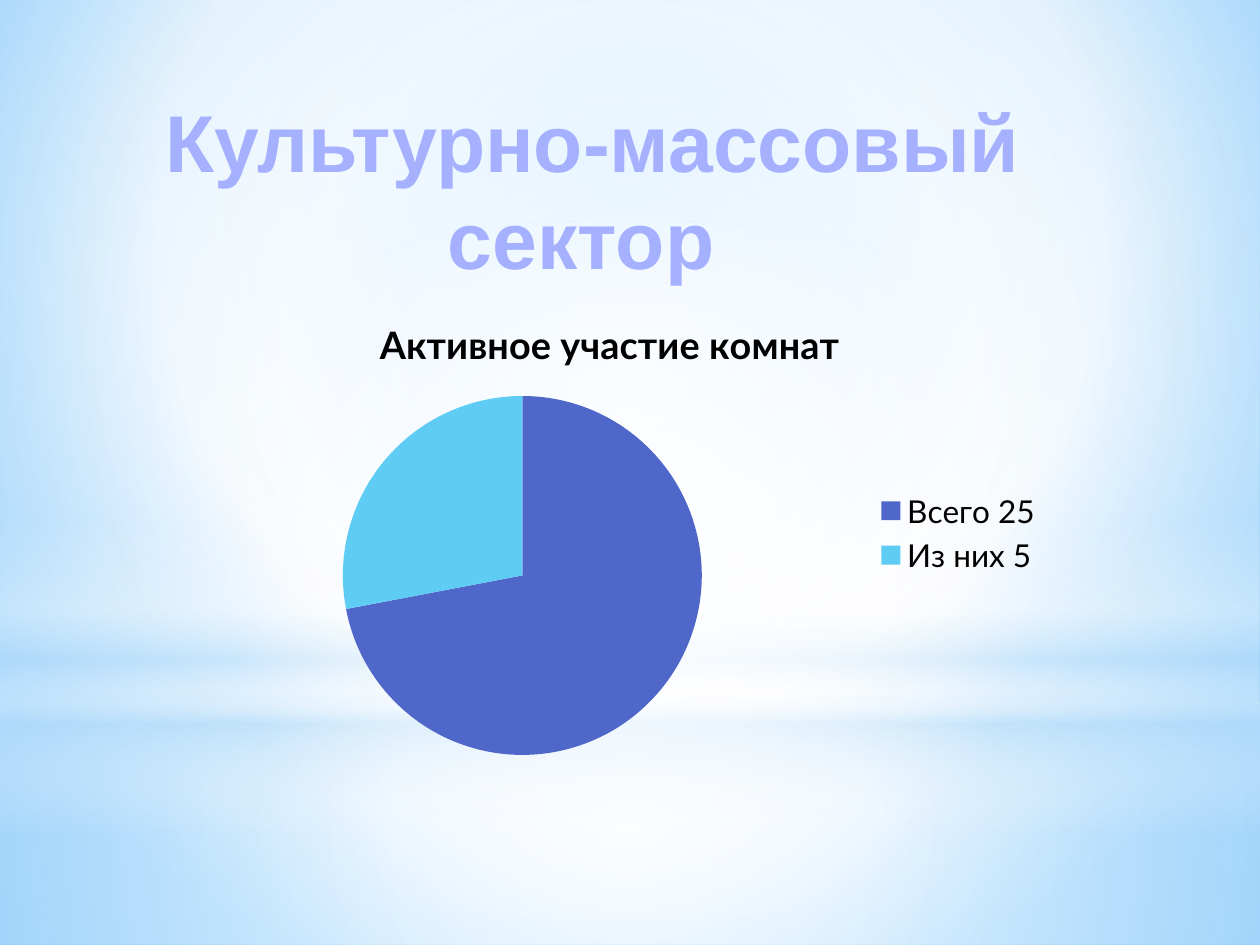
import lxml.etree
import pptx
import pptx.chart.data
import pptx.dml.color
import pptx.enum.chart
import pptx.enum.shapes
import pptx.enum.text
import pptx.oxml.ns
import pptx.util

Cm = pptx.util.Cm
qn = pptx.oxml.ns.qn
RECTANGLE = pptx.enum.shapes.MSO_SHAPE.RECTANGLE
OVAL = pptx.enum.shapes.MSO_SHAPE.OVAL

WIDTH, HEIGHT, HORIZON = 25.4, 19.05, 14.17
TITLE = "Культурно-массовый\vсектор "
TITLE_BOX = (2.9, 1.73, 18.08, 3.18)
CHART_BOX = (3.5, 5.92, 17.78, 9.65)
CHART_TITLE = "Активное участие комнат "
SLICES = [("Всего 25", 72, "4E67C8"), ("Из них 5", 28, "5ECCF3")]
CENTER = (50, 50, 50, 50)

BACKGROUND_STOPS = [(0, "9ED5FF", 100), (60, "FFFFFF", 100), (100, "5BB9FF", 100)]
BACKGROUND_FOCUS = (20, 10, 20, 60)
GLOWS = [
    (RECTANGLE, HORIZON, HEIGHT - HORIZON, CENTER,
     [(0, "FFFFFF", 91), (37, "FFFFFF", 76), (100, "B4DCFA", 79)]),
    (RECTANGLE, 0, HORIZON, CENTER,
     [(0, "FFFFFF", 89), (48, "FFFFFF", 62), (100, "B4DCFA", 79)]),
    (RECTANGLE, 10.46, 6.35, None,
     [(0, "FFFFFF", 0), (29, "FFFFFF", 30), (45, "B4DCFA", 40),
      (55, "FFFFFF", 26), (65, "B4DCFA", 60), (100, "FFFFFF", 0)]),
    (OVAL, 4.44, HORIZON, CENTER, [(0, "FFFFFF", 100), (56, "FFFFFF", 0)]),
]


def color(value):
    return pptx.dml.color.RGBColor.from_string(value)


def apply(target, values):
    for name, value in values.items():
        setattr(target, name, value)


def add_part(parent, tag, **attributes):
    texts = {name: str(value) for name, value in attributes.items()}
    return lxml.etree.SubElement(parent, qn(tag), texts)


def set_gradient(fill, element, stops, focus):
    fill.solid()
    solid = element.find(".//" + qn("a:solidFill"))
    gradient = lxml.etree.Element(qn("a:gradFill"), rotWithShape="1")
    stop_list = add_part(gradient, "a:gsLst")
    for position, value, opacity in stops:
        stop = add_part(stop_list, "a:gs", pos=position * 1000)
        tone = add_part(stop, "a:srgbClr", val=value)
        if opacity < 100:
            add_part(tone, "a:alpha", val=opacity * 1000)
    if focus:
        path = add_part(gradient, "a:path", path="circle")
        sides = {side: part * 1000 for side, part in zip("ltrb", focus)}
        add_part(path, "a:fillToRect", **sides)
    else:
        add_part(gradient, "a:lin", ang=90 * 60000, scaled=0)
    solid.getparent().replace(solid, gradient)


def add_glows(slide):
    for kind, top, height, focus, stops in GLOWS:
        shape = slide.shapes.add_shape(kind, 0, Cm(top), Cm(WIDTH), Cm(height))
        shape.shadow.inherit = False
        set_gradient(shape.fill, shape.element, stops, focus)
        shape.line.fill.background()


def add_title(slide):
    title = slide.shapes.title
    title.element.getparent().append(title.element)
    apply(title, dict(zip(("left", "top", "width", "height"), map(Cm, TITLE_BOX))))
    frame = title.text_frame
    frame.text = TITLE
    apply(frame, {"word_wrap": True,
                  "auto_size": pptx.enum.text.MSO_AUTO_SIZE.NONE,
                  "vertical_anchor": pptx.enum.text.MSO_ANCHOR.TOP})
    paragraph = frame.paragraphs[0]
    paragraph.alignment = pptx.enum.text.PP_ALIGN.CENTER
    for run in paragraph.runs:
        apply(run.font, {"name": "Arial", "size": pptx.util.Pt(46), "bold": True})
        run.font.color.rgb = color("A5B0FF")


def add_pie(slide):
    data = pptx.chart.data.CategoryChartData()
    data.categories = [name for name, value, tone in SLICES]
    data.add_series(CHART_TITLE, [value for name, value, tone in SLICES])
    chart = slide.shapes.add_chart(
        pptx.enum.chart.XL_CHART_TYPE.PIE, *map(Cm, CHART_BOX), data).chart
    apply(chart, {"has_title": True, "has_legend": True})
    apply(chart.legend, {"position": pptx.enum.chart.XL_LEGEND_POSITION.RIGHT,
                         "include_in_layout": False})
    chart.chart_title.include_in_layout = False
    frame = chart.chart_title.text_frame
    frame.text = CHART_TITLE
    title_font = frame.paragraphs[0].runs[0].font
    for font, size, bold in ((chart.font, 18, False), (title_font, 21.6, True)):
        apply(font, {"name": "Lato", "size": pptx.util.Pt(size), "bold": bold})
        font.color.rgb = color("000000")
    plot = chart.plots[0]
    plot.vary_by_categories = True
    for index, (name, value, tone) in enumerate(SLICES):
        fill = plot.series[0].points[index].format.fill
        fill.solid()
        fill.fore_color.rgb = color(tone)


def main():
    presentation = pptx.Presentation()
    apply(presentation, {"slide_width": Cm(WIDTH), "slide_height": Cm(HEIGHT)})
    slide = presentation.slides.add_slide(presentation.slide_layouts[5])
    set_gradient(slide.background.fill, slide.element, BACKGROUND_STOPS, BACKGROUND_FOCUS)
    add_glows(slide)
    add_title(slide)
    add_pie(slide)
    presentation.save("out.pptx")


if __name__ == "__main__":
    main()
